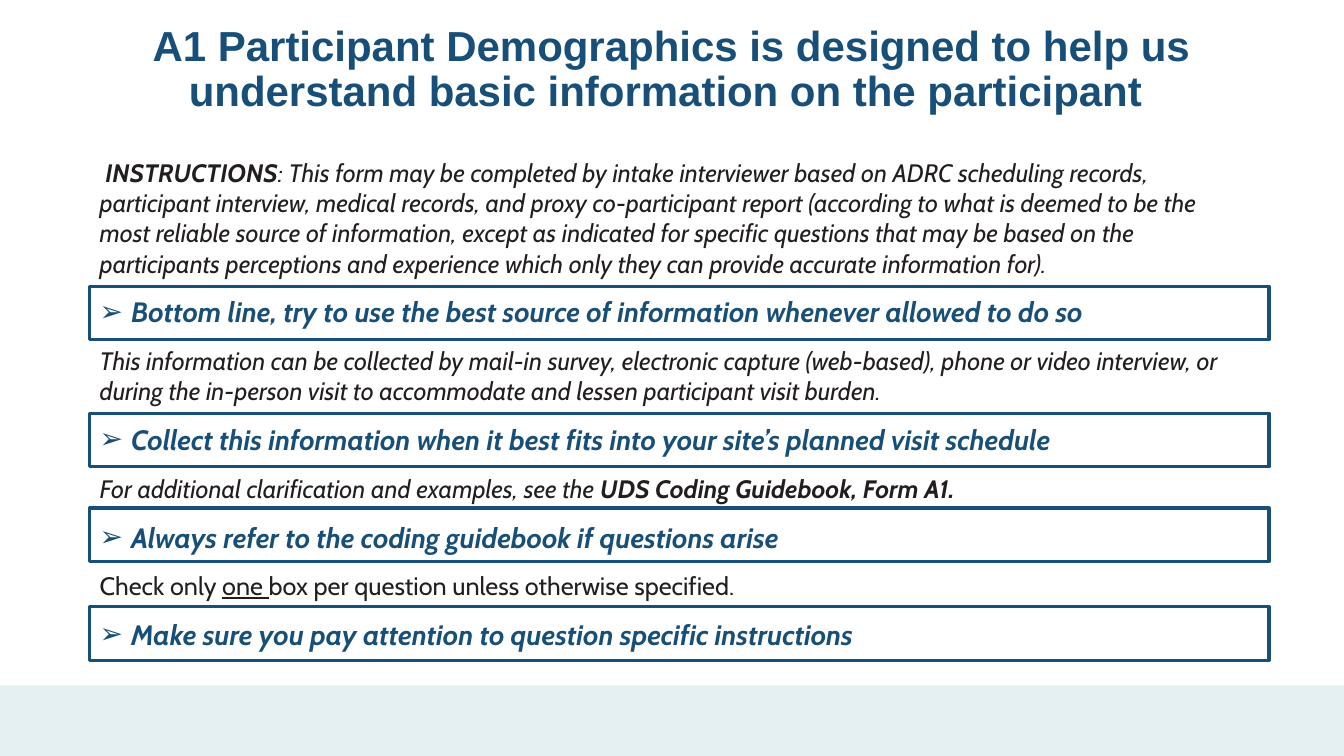
"""Build the A1 Participant Demographics instruction slide."""
from dataclasses import dataclass

from lxml.etree import SubElement as Sub
from pptx import Presentation
from pptx.dml.color import RGBColor as Rgb
from pptx.enum.shapes import MSO_SHAPE as Shape
from pptx.enum.text import MSO_ANCHOR as Anchor
from pptx.enum.text import MSO_AUTO_SIZE as Auto
from pptx.enum.text import PP_ALIGN as Align
from pptx.oxml.ns import qn
from pptx.slide import Slide
from pptx.text.text import _Paragraph as Para
from pptx.util import Pt

HUES = {"blue": "184F78", "ink": "221E1F", "band": "CDE4E6", "black": "000000"}
WIDE, HIGH = 960, 540
LEFT, SPAN = 64.1, 842.4
TOPS = (204.5, 295.2, 362.9, 433.4)
DENT = 22.5


@dataclass(frozen=True)
class Bit:
    """A run of text with its look."""
    text: str
    bold: bool = False
    slant: bool = True
    under: bool = False
    size: float = 18
    hue: str = "ink"
    face: str = "Cabin"


@dataclass(frozen=True)
class Block:
    """A paragraph of runs, with or without an arrow bullet."""
    bits: tuple[Bit, ...]
    arrow: bool = False


def point(text: str) -> Block:
    """Return a bold blue paragraph with an arrow bullet."""
    return Block((Bit(text, bold=True, size=20, hue="blue"),), arrow=True)


BLOCKS = (
    Block((
        Bit(" ", slant=False, hue="black"),
        Bit("INSTRUCTIONS", bold=True),
        Bit(": This form may be completed by intake interviewer based on ADRC "
            "scheduling records, participant interview, medical records, and proxy "
            "co-participant report (according to what is deemed to be the most "
            "reliable source of information, except as indicated for specific "
            "questions that may be based on the participants perceptions and "
            "experience which only they can provide accurate information for)."),
    )),
    point("Bottom line, try to use the best source of information whenever "
          "allowed to do so"),
    Block((
        Bit("This information can be collected by mail-in survey, electronic "
            "capture (web-based), phone or video interview, or during the "
            "in-person visit to accommodate and lessen participant visit burden."),
    )),
    point("Collect this information when it best fits into your site’s planned "
          "visit schedule"),
    Block((
        Bit("For additional clarification and examples, see the "),
        Bit("UDS Coding Guidebook, Form A1.", bold=True),
    )),
    point("Always refer to the coding guidebook if questions arise"),
    Block((
        Bit("Check only ", slant=False),
        Bit("one ", slant=False, under=True),
        Bit("box per question unless otherwise specified.", slant=False),
    )),
    point("Make sure you pay attention to question specific instructions"),
)
TITLE = Bit("A1 Participant Demographics is designed to help us understand basic "
            "information on the participant ", bold=True, slant=False, size=30,
            hue="blue", face="Arial")


def tint(name: str) -> Rgb:
    """Return a named colour."""
    return Rgb.from_string(HUES[name])


def write(para: Para, bit: Bit) -> None:
    """Add one run to a paragraph."""
    run = para.add_run()
    run.text = bit.text
    font = run.font
    font.name, font.size = bit.face, Pt(bit.size)
    font.bold, font.italic, font.underline = bit.bold, bit.slant, bit.under
    font.color.rgb = tint(bit.hue)


def draw_band(slide: Slide) -> None:
    """Draw the pale strip along the foot of the slide."""
    band = slide.shapes.add_shape(Shape.RECTANGLE, 0, Pt(489.6), Pt(WIDE), Pt(50.4))
    band.shadow.inherit = False
    band.line.fill.background()
    band.fill.solid()
    band.fill.fore_color.rgb = tint("band")
    shade = band.fill._xPr.find(qn("a:solidFill"))[0]
    Sub(shade, qn("a:alpha"), val="53000")


def draw_title(slide: Slide) -> None:
    """Place and fill the title."""
    title = slide.shapes.title
    title.left, title.top = Pt(53.3), Pt(13)
    title.width, title.height = Pt(853.2), Pt(74.9)
    frame = title.text_frame
    frame.word_wrap, frame.auto_size = True, Auto.NONE
    frame.vertical_anchor = Anchor.MIDDLE
    para = frame.paragraphs[0]
    para.alignment, para.line_spacing = Align.CENTER, 0.9
    write(para, TITLE)


def draw_body(slide: Slide) -> None:
    """Write the instructions and their key points."""
    box = slide.shapes.add_textbox(Pt(LEFT), Pt(108.7), Pt(834.5), Pt(361.4))
    frame = box.text_frame
    frame.word_wrap, frame.auto_size = True, Auto.SHAPE_TO_FIT_TEXT
    for rank, block in enumerate(BLOCKS):
        para = frame.add_paragraph() if rank else frame.paragraphs[0]
        para.space_after = Pt(12)
        if block.arrow:
            props = para._p.get_or_add_pPr()
            props.set("marL", str(Pt(DENT)))
            props.set("indent", str(-Pt(DENT)))
            Sub(props, qn("a:buFont"), typeface="Arial")
            Sub(props, qn("a:buChar"), char="➢")
        for bit in block.bits:
            write(para, bit)


def draw_frame(slide: Slide, top: float) -> None:
    """Draw the outline round one key point."""
    box = slide.shapes.add_shape(Shape.RECTANGLE, Pt(LEFT), Pt(top), Pt(SPAN), Pt(38.2))
    box.shadow.inherit = False
    box.fill.background()
    box.line.color.rgb = tint("blue")
    box.line.width = Pt(2.25)


def main() -> None:
    """Build and save the deck."""
    deck = Presentation()
    deck.slide_width, deck.slide_height = Pt(WIDE), Pt(HIGH)
    slide = deck.slides.add_slide(deck.slide_layouts[5])
    draw_band(slide)
    draw_title(slide)
    draw_body(slide)
    for top in TOPS:
        draw_frame(slide, top)
    deck.save("out.pptx")


if __name__ == "__main__":
    main()
